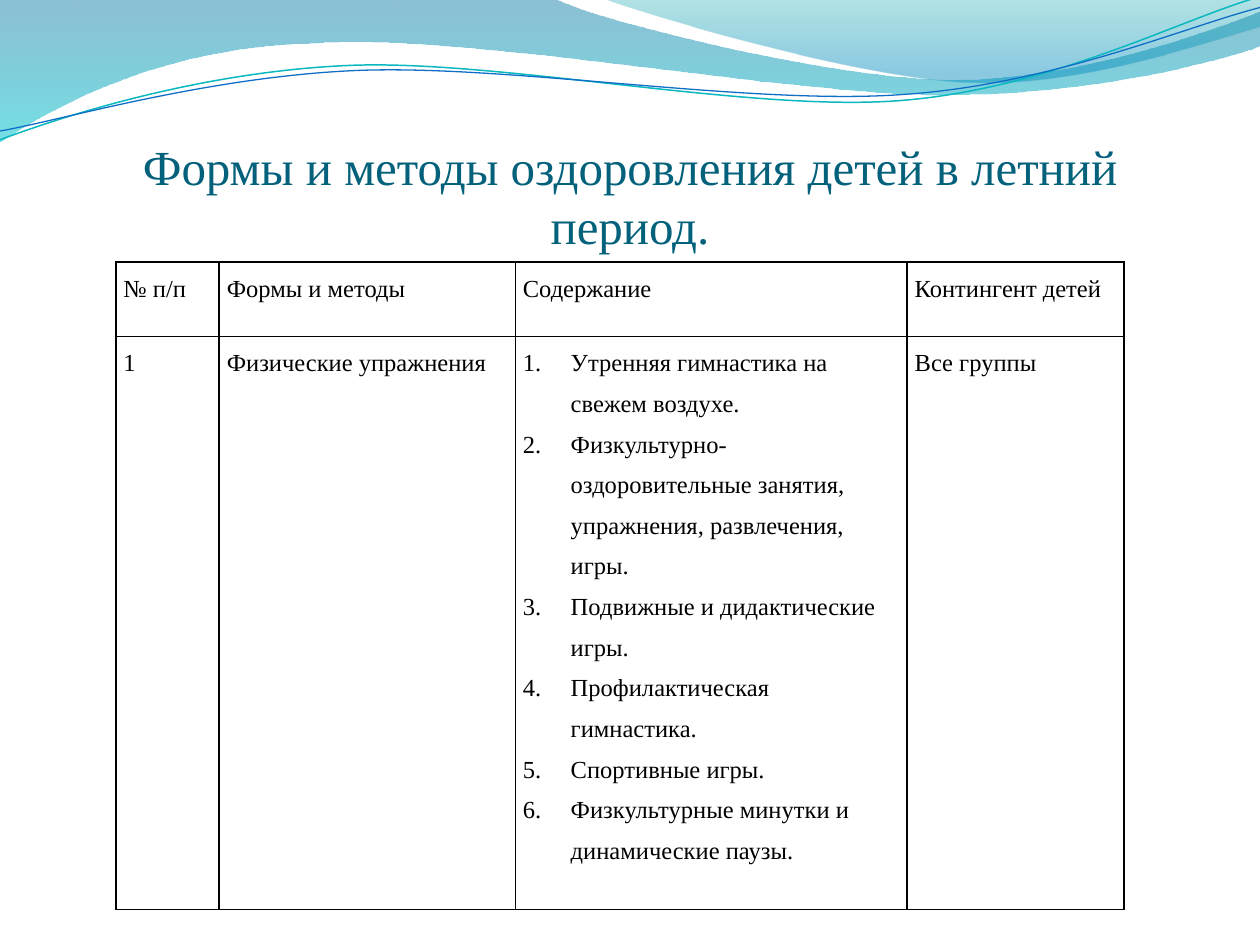
from lxml import etree
from pptx import Presentation
from pptx.dml.color import RGBColor
from pptx.enum.text import MSO_ANCHOR, PP_ALIGN
from pptx.oxml.ns import qn
from pptx.util import Inches, Pt

BOTTOM = MSO_ANCHOR.BOTTOM
CENTER = PP_ALIGN.CENTER
FONT = "Times New Roman"
COLORS = {
    "title": "04617B", "text": "000000", "border": "000000",
    "wave_top": "0074A1", "wave_bottom": "00C6CF",
    "crest_top": "00A1A9", "crest_bottom": "008BBF",
    "teal_line": "0AB8BF", "blue_line": "0F6FC6",
}

deck = Presentation()
deck.slide_width = Inches(10)
deck.slide_height = Inches(7.5)
page = deck.slides.add_slide(deck.slide_layouts[6])


def add_curve(segments, closed):
    points = [
        (Inches(segment[i]), Inches(segment[i + 1]))
        for segment in segments for i in range(0, len(segment), 2)
    ]
    builder = page.shapes.build_freeform(*points[0], scale=1.0)
    builder.add_line_segments(points[1:], close=closed)
    shape = builder.convert_to_shape()
    shape.shadow.inherit = False
    straight = iter(list(shape._element.iter(qn("a:lnTo"))))
    for segment in segments[1:]:
        first = next(straight)
        if len(segment) == 6:
            first.tag = qn("a:cubicBezTo")
            for extra in (next(straight), next(straight)):
                first.append(extra[0])
                extra.getparent().remove(extra)
    return shape


def style_text(para, size, color):
    for span in para.runs:
        span.font.name = FONT
        span.font.size = Pt(size)
        span.font.color.rgb = RGBColor.from_string(COLORS[color])


waves = [
    ([(0, 0), (4.4, -0.01), (4.76, 0.17, 6.64, 0.63, 7.58, 0.63),
      (8.53, 0.63, 9.58, 0.26, 10, 0.09), (10.01, 0.36),
      (9.83, 0.44, 8.7, 0.76, 7.46, 0.75), (6.22, 0.75, 3.82, 0.28, 2.57, 0.34),
      (1.29, 0.36, 0.46, 0.83, -0.01, 1.13)],
     [("wave_top", 0, 45), ("wave_bottom", 1, 55)]),
    ([(4.79, -0.01), (5.09, 0.11, 6.82, 0.62, 7.69, 0.65),
      (8.56, 0.69, 9.61, 0.32, 10, 0.21), (10, 0)],
     [("crest_top", 0, 30), ("crest_bottom", 0.8, 45)]),
]
for segments, stops in waves:
    wave = add_curve(segments, True)
    wave.line.fill.background()
    wave.fill.gradient()
    wave.fill.gradient_angle = 270
    for stop, (color, position, opacity) in zip(wave.fill.gradient_stops, stops):
        stop.color.rgb = RGBColor.from_string(COLORS[color])
        stop.position = position
    for tint, (color, position, opacity) in zip(wave._element.spPr.iter(qn("a:srgbClr")), stops):
        etree.SubElement(tint, qn("a:alpha"), val=str(opacity * 1000))

lines = [
    ([(0, 1.11), (0.48, 0.93, 1.58, 0.57, 2.77, 0.52),
      (3.95, 0.47, 5.93, 0.89, 7.13, 0.8), (8.33, 0.71, 9.38, 0.15, 9.98, -0.02)],
     "teal_line", 0.85),
    ([(0, 1.04), (0.47, 0.96, 1.64, 0.61, 2.83, 0.56),
      (4.03, 0.51, 5.97, 0.84, 7.17, 0.75), (8.36, 0.67, 9.41, 0.21, 10, 0.06)],
     "blue_line", 0.75),
]
for segments, color, width in lines:
    curve = add_curve(segments, False)
    curve.fill.background()
    curve.line.color.rgb = RGBColor.from_string(COLORS[color])
    curve.line.width = Pt(width)

title_box = page.shapes.add_textbox(Inches(0.5), Inches(0.77), Inches(9), Inches(1.25))
title_frame = title_box.text_frame
title_frame.word_wrap = True
title_frame.vertical_anchor = BOTTOM
title_frame.margin_left = title_frame.margin_right = title_frame.margin_bottom = 0
title_frame.margin_top = Inches(0.05)
title_frame.text = "Формы и методы оздоровления детей в летний период."
title_frame.paragraphs[0].alignment = CENTER
style_text(title_frame.paragraphs[0], 28, "title")

activities = [
    "Утренняя гимнастика на свежем воздухе.",
    "Физкультурно-оздоровительные занятия, упражнения, развлечения, игры.",
    "Подвижные и дидактические игры.",
    "Профилактическая гимнастика.",
    "Спортивные игры.",
    "Физкультурные минутки и динамические паузы.",
]
rows = [
    ["№ п/п", "Формы и методы", "Содержание", "Контингент детей"],
    ["1", "Физические упражнения", "\n".join(activities), "Все группы"],
]
table_frame = page.shapes.add_table(2, 4, Inches(0.92), Inches(2.08), Inches(8), Inches(5.1))
table = table_frame.table
table.first_row = False
table.horz_banding = False
for column, width in zip(table.columns, (0.82, 2.35, 3.11, 1.72)):
    column.width = Inches(width)
for row, height in zip(table.rows, (0.59, 3.91)):
    row.height = Inches(height)
table_frame.height = Inches(5.1)

for row, texts in zip(table.rows, rows):
    for cell, text in zip(row.cells, texts):
        cell.margin_left = cell.margin_right = Inches(0.06)
        cell.margin_top = cell.margin_bottom = 0
        cell.text_frame.text = text
        paragraphs = cell.text_frame.paragraphs
        for para in paragraphs:
            para.line_spacing = 1.5
            style_text(para, 14, "text")
            if len(paragraphs) > 1:
                properties = para._p.get_or_add_pPr()
                properties.set("marL", str(Inches(0.38)))
                properties.set("indent", str(-Inches(0.38)))
                etree.SubElement(properties, qn("a:buAutoNum"), type="arabicPeriod")
        cell_properties = cell._tc.get_or_add_tcPr()
        for side in ("a:lnL", "a:lnR", "a:lnT", "a:lnB"):
            border = etree.SubElement(cell_properties, qn(side), w=str(Pt(1)))
            border_fill = etree.SubElement(border, qn("a:solidFill"))
            etree.SubElement(border_fill, qn("a:srgbClr"), val=COLORS["border"])
        cell.fill.background()

deck.save("out.pptx")
